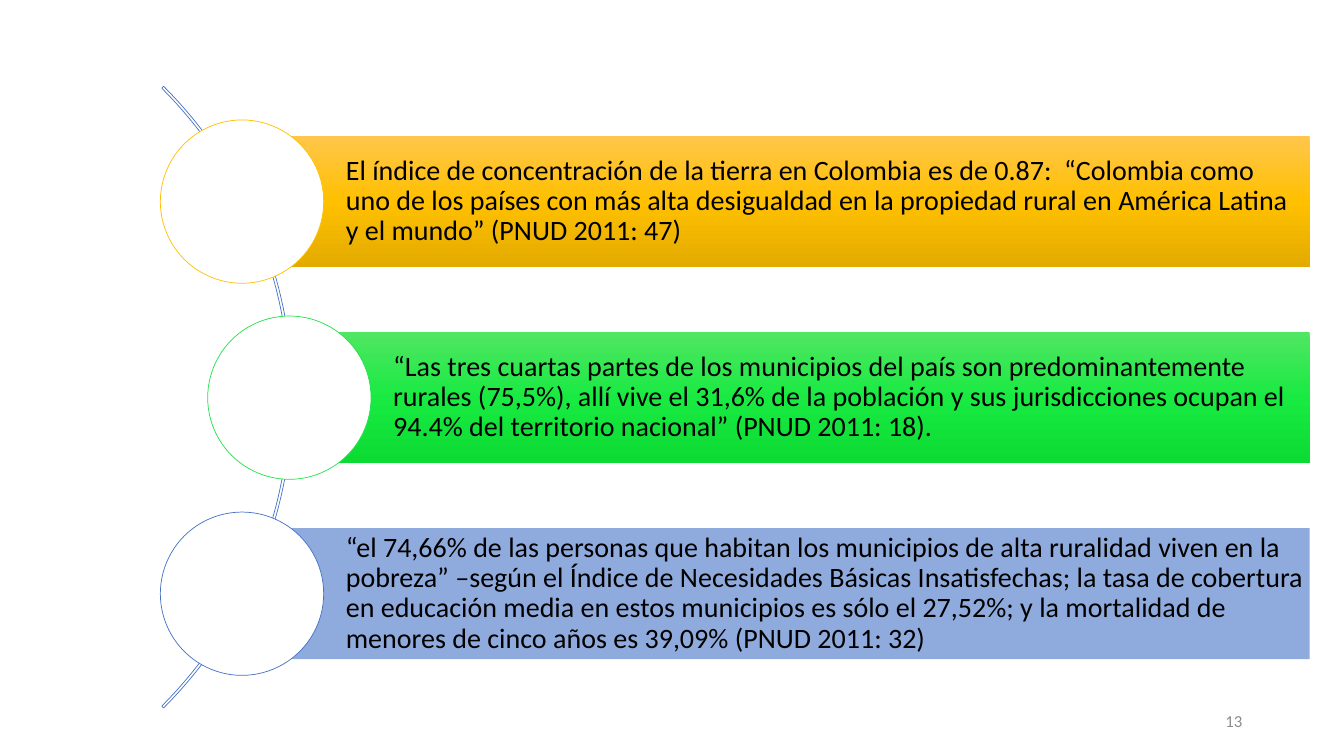
import copy

import pptx
import pptx.dml.color
import pptx.enum.shapes
import pptx.enum.text
import pptx.oxml.ns
import pptx.util

Inches = pptx.util.Inches
Shape = pptx.enum.shapes.MSO_SHAPE
Align = pptx.enum.text.PP_ALIGN

BAR_HEIGHT = 1.3
CIRCLE_SIZE = 1.62
ROW_PITCH = 1.945

FINDINGS = [
    ("El índice de concentración de la tierra en Colombia es de 0.87:  “Colombia como uno de "
     "los países con más alta desigualdad en la propiedad rural en América Latina y el mundo” "
     "(PNUD 2011: 47)",
     2.4, ["FFC64B", "FFC000", "E3AB00"], "FFC000"),
    ("“Las tres cuartas partes de los municipios del país son predominantemente rurales (75,5%), "
     "allí vive el 31,6% de la población y sus jurisdicciones ocupan el 94.4% del territorio "
     "nacional” (PNUD 2011: 18).",
     2.87, ["51E663", "19EA42", "0CDB34"], "23E148"),
    ("“el 74,66% de las personas que habitan los municipios de alta ruralidad viven en la "
     "pobreza” –según el Índice de Necesidades Básicas Insatisfechas; la tasa de cobertura en "
     "educación media en estos municipios es sólo el 27,52%; y la mortalidad de menores de cinco "
     "años es 39,09% (PNUD 2011: 32)",
     2.4, ["8FAADC"], "4472C4"),
]


def rgb(color):
    """Turn a hex string into a colour."""
    return pptx.dml.color.RGBColor.from_string(color)


def paint(shape, colors):
    """Fill a shape with one colour, a top-down gradient, or nothing."""
    if not colors:
        shape.fill.background()
    elif len(colors) == 1:
        shape.fill.solid()
        shape.fill.fore_color.rgb = rgb(colors[0])
    else:
        shape.fill.gradient()
        shape.fill.gradient_angle = 270
        stop_list = shape._element.spPr.find(".//" + pptx.oxml.ns.qn("a:gsLst"))
        while len(stop_list) < len(colors):
            stop_list.append(copy.deepcopy(stop_list[0]))
        for index, stop in enumerate(shape.fill.gradient_stops):
            stop.position = index / (len(colors) - 1)
            stop.color.rgb = rgb(colors[index])


def add_preset(slide, preset, box, colors=(), outline=None):
    """Add a preset shape without shadow in a box given in inches."""
    shape = slide.shapes.add_shape(preset, *map(Inches, box))
    shape.shadow.inherit = False
    paint(shape, colors)
    if outline:
        shape.line.color.rgb = rgb(outline)
        shape.line.width = pptx.util.Pt(0.5)
    else:
        shape.line.fill.background()
    return shape


def write(shape, text, size=20, color="000000", align=Align.LEFT, spacing=1.0,
          insets=(0.1, 0.05, 0.1, 0.05)):
    """Write one vertically centred paragraph into a shape."""
    frame = shape.text_frame
    frame.word_wrap = True
    frame.vertical_anchor = pptx.enum.text.MSO_ANCHOR.MIDDLE
    (frame.margin_left, frame.margin_top,
     frame.margin_right, frame.margin_bottom) = map(Inches, insets)
    paragraph = frame.paragraphs[0]
    paragraph.alignment = align
    paragraph.line_spacing = spacing
    run = paragraph.add_run()
    run.text = text
    run.font.name = "Calibri"
    run.font.size = pptx.util.Pt(size)
    run.font.color.rgb = rgb(color)


def add_arc(slide, left, top, size):
    """Draw the thin arc that links the circles."""
    arc = add_preset(slide, Shape.BLOCK_ARC, (left, top, size, size), outline="4472C4")
    for index, value in enumerate((189, 27, 0.003)):
        arc.adjustments[index] = value


def add_finding(slide, left, top, width, text, colors, outline):
    """Draw a text bar with a circle centred on its left side."""
    bar = add_preset(slide, Shape.RECTANGLE, (left, top, width, BAR_HEIGHT), colors)
    write(bar, text, spacing=0.9, insets=(1.03, 0.06, 0.06, 0.06))
    circle_left = left - CIRCLE_SIZE / 2
    circle_top = top + (BAR_HEIGHT - CIRCLE_SIZE) / 2
    add_preset(slide, Shape.OVAL, (circle_left, circle_top, CIRCLE_SIZE, CIRCLE_SIZE),
               ["FFFFFF"], outline)


def add_findings(slide, top, right):
    """Stack the findings at an equal pitch, ending at a common right edge."""
    for row, (text, left, colors, outline) in enumerate(FINDINGS):
        add_finding(slide, left, top + row * ROW_PITCH, right - left, text, colors, outline)


def add_page_number(slide, left, top, width, height):
    """Write the slide number at the lower right."""
    number = slide.shapes.add_textbox(*map(Inches, (left, top, width, height)))
    write(number, "13", size=12, color="8C8C8C", align=Align.RIGHT)


def main():
    """Build and save the slide."""
    deck = pptx.Presentation()
    deck.slide_width, deck.slide_height = Inches(13.33), Inches(7.5)
    slide = deck.slides.add_slide(deck.slide_layouts[6])
    add_arc(slide, -5.82, -0.42, 8.72)
    add_findings(slide, 1.35, 12.99)
    add_page_number(slide, 9.42, 6.95, 3, 0.4)
    deck.save("out.pptx")


if __name__ == "__main__":
    main()
